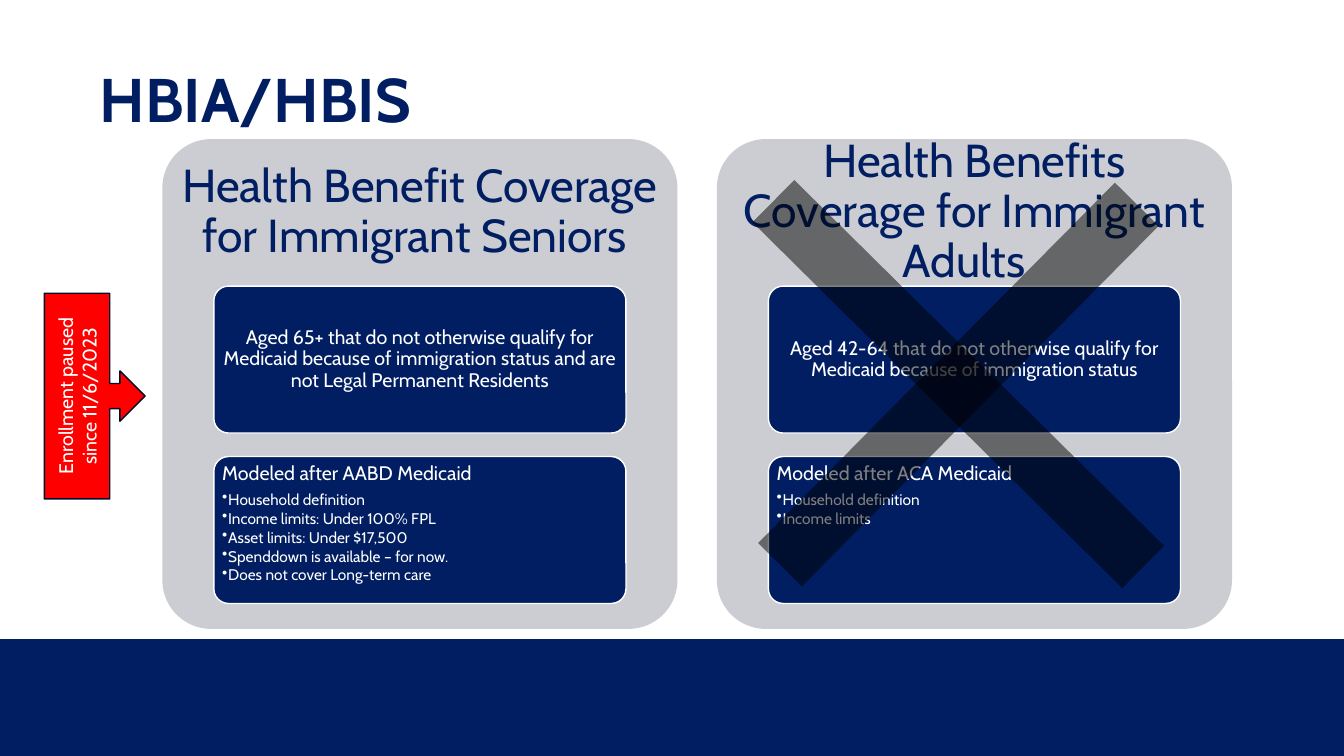
from lxml import etree
from pptx import Presentation
from pptx.dml.color import RGBColor
from pptx.enum.shapes import MSO_SHAPE as SHAPE
from pptx.enum.text import MSO_ANCHOR as ANCHOR, PP_ALIGN as ALIGN
from pptx.oxml.ns import qn
from pptx.util import Inches, Pt

NAVY = RGBColor(0x00, 0x1E, 0x61)
GREY = RGBColor(0xCC, 0xCD, 0xD2)
WHITE = RGBColor(0xFF, 0xFF, 0xFF)
RED = RGBColor(0xFF, 0x00, 0x00)
DARK_NAVY = RGBColor(0x00, 0x0D, 0x2B)
BLACK = RGBColor(0x00, 0x00, 0x00)

SLIDE = (0, 0, Inches(13.33), Inches(7.5))
PANEL_LEFT, PANEL_PITCH = 12.08, 41.26

PROGRAMS = [
    ("Health Benefit Coverage for Immigrant Seniors ",
     "Aged 65+ that do not otherwise qualify for Medicaid because of "
     "immigration status and are not Legal Permanent Residents",
     "Modeled after AABD Medicaid ",
     ["Household definition", "Income limits: Under 100% FPL",
      "Asset limits: Under $17,500", "Spenddown is available – for now.",
      "Does not cover Long-term care"]),
    ("Health Benefits Coverage for Immigrant Adults  ",
     "Aged 42-64 that do not otherwise qualify for Medicaid because of "
     "immigration status",
     "Modeled after ACA Medicaid",
     ["Household definition", "Income limits"]),
]


def share(parent, left, top, width, height):
    x, y, w, h = parent
    return (int(x + w * left / 100), int(y + h * top / 100),
            int(w * width / 100), int(h * height / 100))


def set_all(target, values):
    for name, value in values.items():
        setattr(target, name, value)


def add_block(s, kind, box, fill, line=None):
    sp = s.shapes.add_shape(kind, *box)
    sp.shadow.inherit = False
    sp.fill.solid()
    sp.fill.fore_color.rgb = fill
    if line is None:
        sp.line.fill.background()
    else:
        sp.line.color.rgb = line
        sp.line.width = Pt(1)
    return sp


def add_rounded(s, box, fill, line=None):
    sp = add_block(s, SHAPE.ROUNDED_RECTANGLE, box, fill, line)
    sp.adjustments[0] = 0.1
    return sp


def set_frame(tf, anchor, inset_x=0.1, inset_y=0.05):
    set_all(tf, {
        "word_wrap": True, "vertical_anchor": anchor,
        "margin_left": Inches(inset_x), "margin_right": Inches(inset_x),
        "margin_top": Inches(inset_y), "margin_bottom": Inches(inset_y),
    })


def write(p, text, size, color, align=ALIGN.LEFT, bold=False, spacing=0.9):
    set_all(p, {"alignment": align, "line_spacing": spacing})
    r = p.add_run()
    r.text = text
    set_all(r.font, {"name": "Cabin", "size": Pt(size), "bold": bold})
    r.font.color.rgb = color


def add_bullet(p):
    pPr = p._p.get_or_add_pPr()
    pPr.set("marL", str(Inches(0.06)))
    pPr.set("indent", str(Inches(-0.06)))
    etree.SubElement(pPr, qn("a:buChar")).set("char", "•")


def add_label(s, box, text, size, **style):
    tf = s.shapes.add_textbox(*box).text_frame
    inset = style.pop("inset", (0.1, 0.05))
    set_frame(tf, ANCHOR.MIDDLE, *inset)
    write(tf.paragraphs[0], text, size, NAVY, **style)


def add_card(s, box, anchor):
    tf = add_rounded(s, box, NAVY, WHITE).text_frame
    set_frame(tf, anchor, 0.04, 0.03)
    return tf


def add_program(s, panel, heading, audience, model, rules):
    add_rounded(s, panel, GREY)
    add_label(s, share(panel, 0, 0, 100, 30), heading, 33,
              align=ALIGN.CENTER, inset=(0.14, 0.14))
    tf = add_card(s, share(panel, 10, 30, 80, 30), ANCHOR.MIDDLE)
    write(tf.paragraphs[0], audience, 14, WHITE, ALIGN.CENTER)
    tf = add_card(s, share(panel, 10, 64.8, 80, 30), ANCHOR.TOP)
    write(tf.paragraphs[0], model, 14, WHITE)
    tf.paragraphs[0].space_after = Pt(4.9)
    for rule in rules:
        p = tf.add_paragraph()
        add_bullet(p)
        write(p, rule, 11, WHITE)
        p.level = 1
        p.space_after = Pt(1.65)


def add_cross_bar(s, box, angle):
    sp = add_block(s, SHAPE.RECTANGLE, box, BLACK)
    sp.rotation = angle
    color = sp.fill._xPr.find(qn("a:solidFill"))[0]
    etree.SubElement(color, qn("a:alpha")).set("val", "50000")


def add_callout(s, box, text):
    tf = add_block(s, SHAPE.RIGHT_ARROW_CALLOUT, box, RED,
                   DARK_NAVY).text_frame
    set_frame(tf, ANCHOR.MIDDLE)
    tf._txBody.bodyPr.set("vert", "vert270")
    write(tf.paragraphs[0], text, 14, WHITE, ALIGN.CENTER, spacing=1.0)


def main():
    prs = Presentation()
    prs.slide_width, prs.slide_height = SLIDE[2:]
    s = prs.slides.add_slide(prs.slide_layouts[6])
    add_block(s, SHAPE.RECTANGLE, share(SLIDE, 0, 84.53, 100, 15.47), NAVY)
    add_label(s, share(SLIDE, 6.68, 3.87, 86.27, 19.33), "HBIA/HBIS", 44,
              bold=True)
    for i, program in enumerate(PROGRAMS):
        left = PANEL_LEFT + i * PANEL_PITCH
        add_program(s, share(SLIDE, left, 18.4, 38.33, 64.8), *program)
    add_cross_bar(s, share(SLIDE, 69.09, 16.4, 4.43, 68.8), 314.7)
    add_cross_bar(s, share(SLIDE, 69.02, 17.33, 4.58, 67.07), 44.7)
    add_callout(s, share(SLIDE, 3.3, 38.8, 7.5, 27.2),
                "Enrollment paused since 11/6/2023")
    prs.save("out.pptx")


if __name__ == "__main__":
    main()
